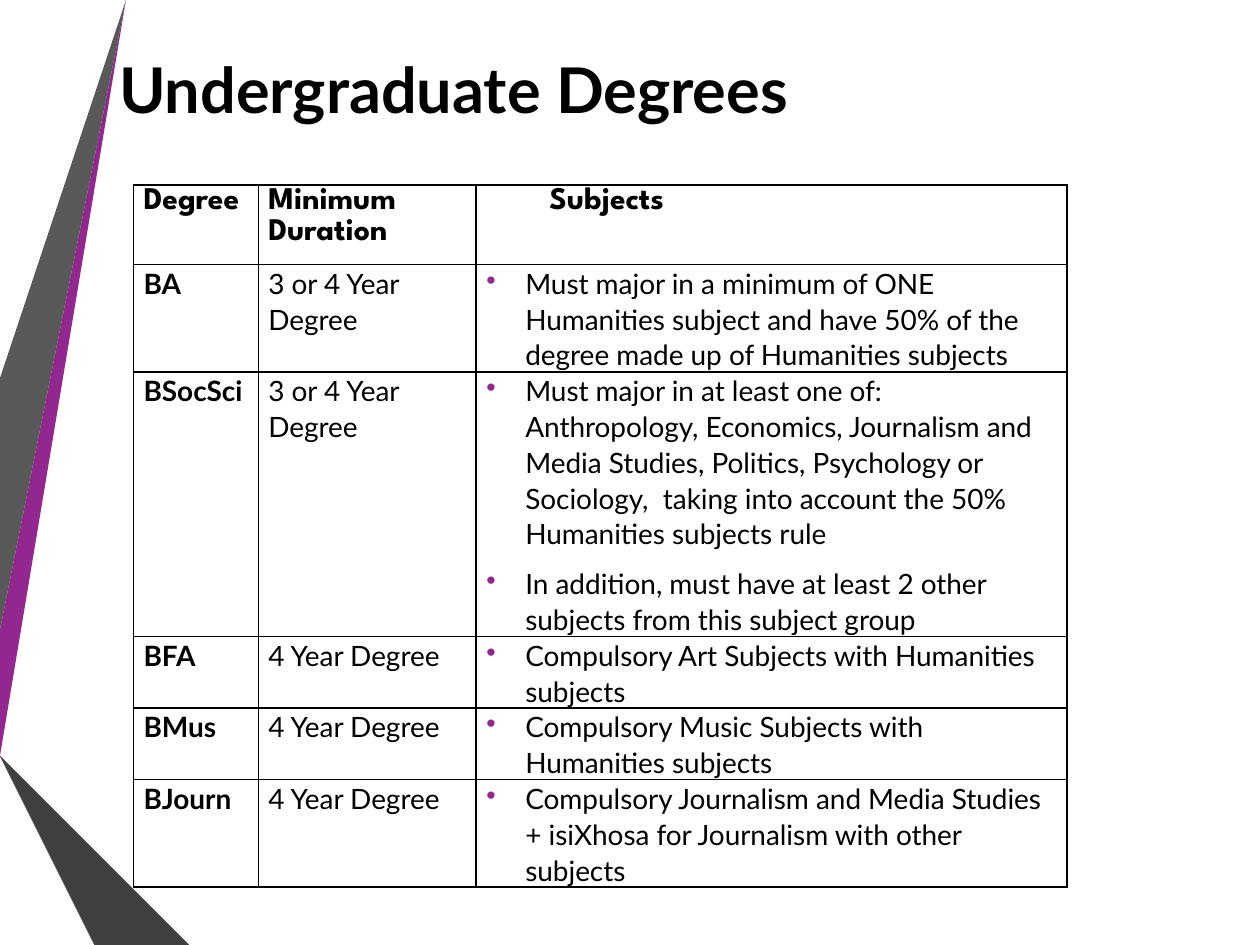
from pptx import Presentation
from pptx.dml.color import RGBColor
from pptx.enum.text import MSO_ANCHOR, MSO_AUTO_SIZE, PP_ALIGN
from pptx.oxml import parse_xml
from pptx.oxml.ns import nsdecls
from pptx.util import Inches, Pt

BLACK, PURPLE = "000000", "92278F"


def color(hex_string):
    return RGBColor.from_string(hex_string)


def style(paragraph, font_name, size, bold):
    font = paragraph.font
    font.name, font.size, font.bold = font_name, Pt(size), bold
    font.color.rgb = color(BLACK)


prs = Presentation()
prs.slide_width, prs.slide_height = Inches(10), Inches(7.5)
slide = prs.slides.add_slide(prs.slide_layouts[5])

# Title, with a line break that lifts it above the middle
title = slide.shapes.title
title.left, title.top = Inches(0), Inches(0.55)
title.width, title.height = Inches(7.2), Inches(0.91)
heading = title.text_frame
heading.text = "Undergraduate Degrees\v"
heading.auto_size = MSO_AUTO_SIZE.NONE
heading.vertical_anchor = MSO_ANCHOR.MIDDLE
heading.paragraphs[0].alignment = PP_ALIGN.CENTER
style(heading.paragraphs[0], "Lato", 36, True)

# Ribbons down the left edge, behind the title
ribbons = [
    (PURPLE, [(0, 5.44), (0, 5.75), (0.22, 5.79), (1.17, 0), (0.89, 0)]),
    ("595959", [(0.83, 0), (0.55, 0), (0, 3.36), (0, 5.06)]),
    ("262626", [(0, 6.19), (0, 6.21), (0.93, 7.5), (0.99, 7.5)]),
    ("491447", [(0, 5.79), (0, 5.8), (1.56, 7.5), (1.63, 7.5)]),
    ("6D1D6B", [(0, 5.79), (1.63, 7.5), (2.33, 7.5), (0.22, 5.79), (0, 5.75)]),
    ("404040", [(0, 6.19), (0.99, 7.5), (1.51, 7.5), (0, 5.86)]),
]
for fill, points in ribbons:
    builder = slide.shapes.build_freeform(*points[0], scale=Inches(1))
    builder.add_line_segments(points[1:], close=True)
    ribbon = builder.convert_to_shape()
    ribbon.shadow.inherit = False
    ribbon.fill.solid()
    ribbon.fill.fore_color.rgb = color(fill)
    ribbon.line.fill.background()
    title.element.addprevious(ribbon.element)

# Degree table: each cell is a list of paragraphs
degrees = [
    (["Degree"], ["Minimum Duration"], ["Subjects"]),
    (["BA"], ["3 or 4 Year Degree"],
     ["Must major in a minimum of ONE Humanities subject and have 50% of the "
      "degree made up of Humanities subjects"]),
    (["BSocSci"], ["3 or 4 Year Degree"],
     ["Must major in at least one of: Anthropology, Economics, Journalism and "
      "Media Studies, Politics, Psychology or Sociology,  taking into account "
      "the 50% Humanities subjects rule",
      "In addition, must have at least 2 other subjects from this subject group"]),
    (["BFA"], ["4 Year Degree"],
     ["Compulsory Art Subjects with Humanities subjects"]),
    (["BMus"], ["4 Year Degree"],
     ["Compulsory Music Subjects with Humanities subjects"]),
    (["BJourn"], ["4 Year Degree"],
     ["Compulsory Journalism and Media Studies + isiXhosa for Journalism with "
      "other subjects"]),
]
column_widths = [0.99, 1.73, 4.69]
row_heights = [0.63, 0.84, 2.1, 0.56, 0.56, 0.84]
table = slide.shapes.add_table(
    len(row_heights), len(column_widths), Inches(1.06), Inches(1.47),
    Inches(sum(column_widths)), Inches(sum(row_heights))).table
table.first_row = table.horz_banding = False
for column, width in zip(table.columns, column_widths):
    column.width = Inches(width)
for row, height in zip(table.rows, row_heights):
    row.height = Inches(height)

for r, degree in enumerate(degrees):
    for c, lines in enumerate(degree):
        cell = table.cell(r, c)
        cell.margin_left = cell.margin_right = Inches(0.08)
        cell.margin_top = cell.margin_bottom = 0
        cell.text = "\n".join(lines)

        # Borders come before the fill in the cell properties
        properties = cell._tc.get_or_add_tcPr()
        for side in ("lnL", "lnR", "lnT", "lnB"):
            properties.append(parse_xml(
                f'<a:{side} {nsdecls("a")} w="{Pt(1)}"><a:solidFill>'
                f'<a:srgbClr val="{BLACK}"/></a:solidFill></a:{side}>'))
        cell.fill.background()

        for paragraph in cell.text_frame.paragraphs:
            paragraph.line_spacing = 1.07
            paragraph.space_after = Pt(8)
            indents = paragraph._p.get_or_add_pPr()
            if c == 2 and r == 0:
                indents.set("marL", str(Inches(0.5)))
            elif c == 2:
                indents.set("marL", str(Inches(0.31)))
                indents.set("indent", str(Inches(-0.31)))
                indents.append(parse_xml(
                    f'<a:buClr {nsdecls("a")}><a:srgbClr val="{PURPLE}"/></a:buClr>'))
                indents.append(parse_xml(f'<a:buChar {nsdecls("a")} char="•"/>'))
            if r == 0:
                style(paragraph, "League Spartan", 18, True)
            else:
                style(paragraph, "Lato", 16, c == 0)

prs.save("out.pptx")
